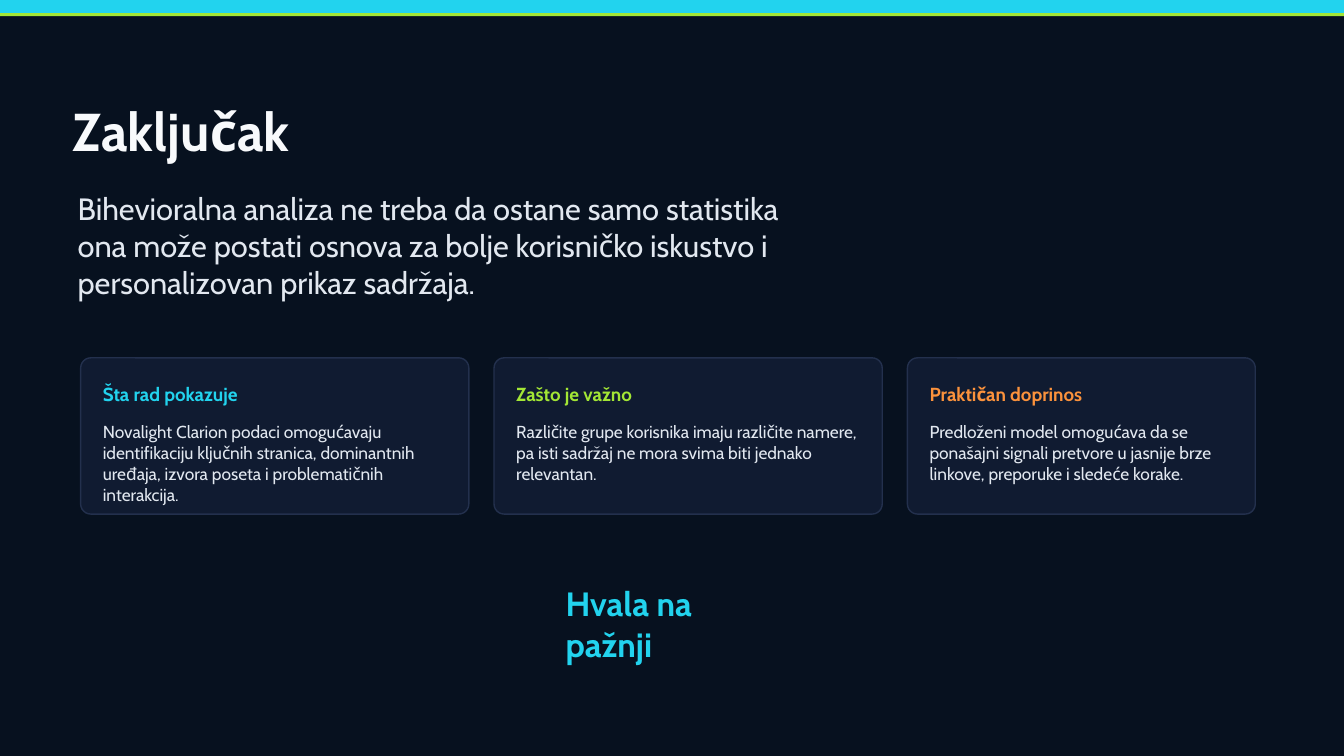
import pptx
import pptx.util
import pptx.dml.color
import pptx.enum.shapes
import pptx.enum.text

Inches = pptx.util.Inches
RGBColor = pptx.dml.color.RGBColor
SHAPE = pptx.enum.shapes.MSO_SHAPE
ANCHOR = pptx.enum.text.MSO_ANCHOR

NIGHT = RGBColor(0x07, 0x11, 0x1F)
CARD = RGBColor(0x10, 0x1B, 0x31)
EDGE = RGBColor(0x23, 0x30, 0x4D)
CYAN = RGBColor(0x22, 0xD3, 0xEE)
LIME = RGBColor(0xA3, 0xE6, 0x35)
ORANGE = RGBColor(0xFB, 0x92, 0x3C)
WHITE = RGBColor(0xF8, 0xFA, 0xFC)
MIST = RGBColor(0xE2, 0xE8, 0xF0)

deck = pptx.Presentation()
deck.slide_width, deck.slide_height = Inches(13.33), Inches(7.5)
page = deck.slides.add_slide(deck.slide_layouts[6])
page.background.fill.solid()
page.background.fill.fore_color.rgb = NIGHT


def add_panel(kind, left, top, width, height, color):
    panel = page.shapes.add_shape(kind, *map(Inches, (left, top, width, height)))
    panel.shadow.inherit = False
    panel.fill.solid()
    panel.fill.fore_color.rgb = color
    panel.line.fill.background()
    return panel


def add_text(words, left, top, width, height, size, color, bold=False, anchor=ANCHOR.MIDDLE):
    box = page.shapes.add_textbox(*map(Inches, (left, top, width, height)))
    frame_format = {
        "word_wrap": True, "vertical_anchor": anchor,
        "margin_left": 0, "margin_top": 0, "margin_right": 0, "margin_bottom": 0,
    }
    for name, value in frame_format.items():
        setattr(box.text_frame, name, value)
    span = box.text_frame.paragraphs[0].add_run()
    span.text = words
    font_format = {"name": "Cabin", "size": pptx.util.Pt(size), "bold": bold}
    for name, value in font_format.items():
        setattr(span.font, name, value)
    span.font.color.rgb = color


add_panel(SHAPE.RECTANGLE, 0, 0, 13.33, 0.13, CYAN)
add_panel(SHAPE.RECTANGLE, 0, 0.13, 13.33, 0.03, LIME)

add_text("Zaključak", 0.72, 0.95, 5.5, 0.68, 38, WHITE, bold=True)
add_text(
    "Bihevioralna analiza ne treba da ostane samo statistika ona može postati "
    "osnova za bolje korisničko iskustvo i personalizovan prikaz sadržaja.",
    0.77, 1.88, 7.05, 1.1, 22, MIST,
)

cards = [
    ("Šta rad pokazuje", CYAN, 3.85,
     "Novalight Clarion podaci omogućavaju identifikaciju ključnih stranica, "
     "dominantnih uređaja, izvora poseta i problematičnih interakcija."),
    ("Zašto je važno", LIME, 3.85,
     "Različite grupe korisnika imaju različite namere, pa isti sadržaj ne mora "
     "svima biti jednako relevantan."),
    ("Praktičan doprinos", ORANGE, 3.45,
     "Predloženi model omogućava da se ponašajni signali pretvore u jasnije brze "
     "linkove, preporuke i sledeće korake."),
]
first_left, column_step, card_top, padding = 0.8, 4.1, 3.55, 0.22
for column, (heading, accent, width, message) in enumerate(cards):
    left = first_left + column * column_step
    card = add_panel(SHAPE.ROUNDED_RECTANGLE, left, card_top, width, 1.55, CARD)
    card.adjustments[0] = 0.065
    card.line.color.rgb = EDGE
    card.line.width = pptx.util.Pt(1)
    text_left, text_width = left + padding, width - 2 * padding
    add_text(heading, text_left, card_top + 0.2, text_width, 0.32, 13.5, accent, bold=True)
    add_text(message, text_left, card_top + 0.63, text_width, 0.8, 12.4, MIST, anchor=ANCHOR.TOP)

add_text("Hvala na pažnji", 5.61, 5.96, 2.12, 0.45, 24, CYAN, bold=True)

deck.save("out.pptx")
